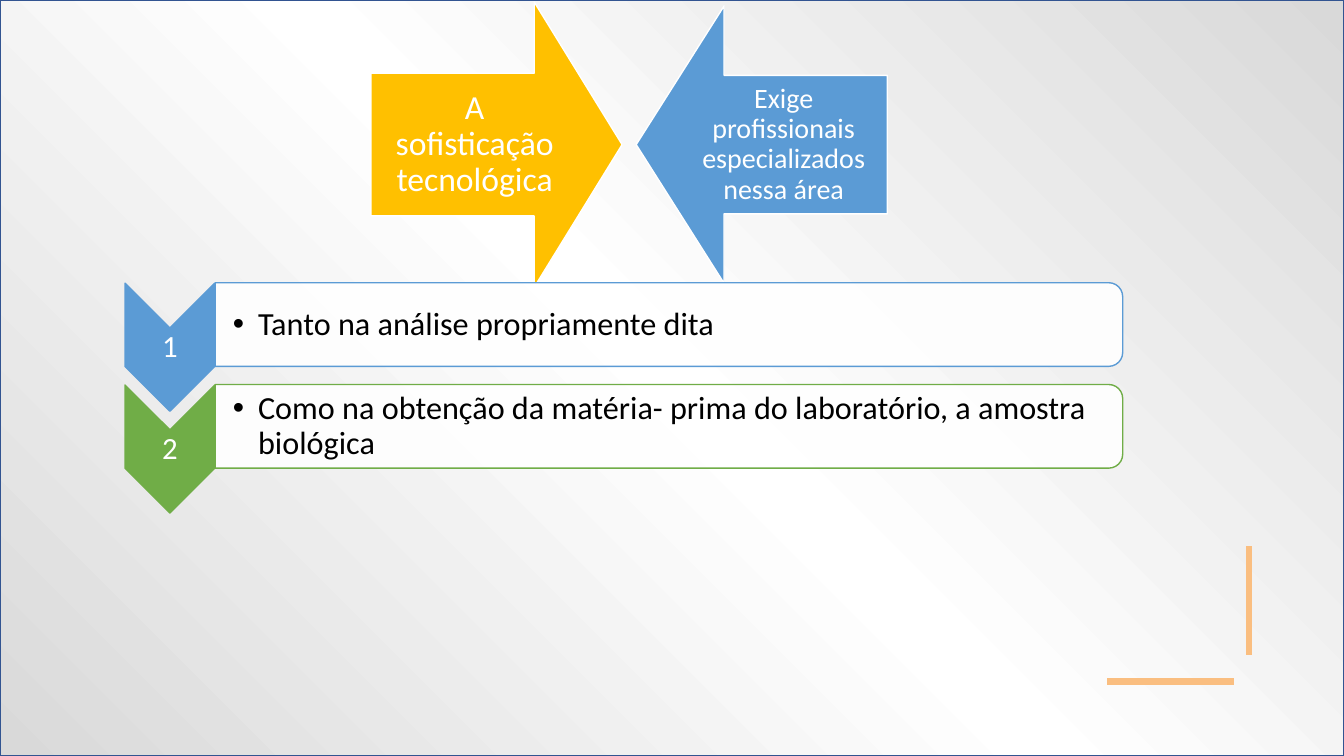
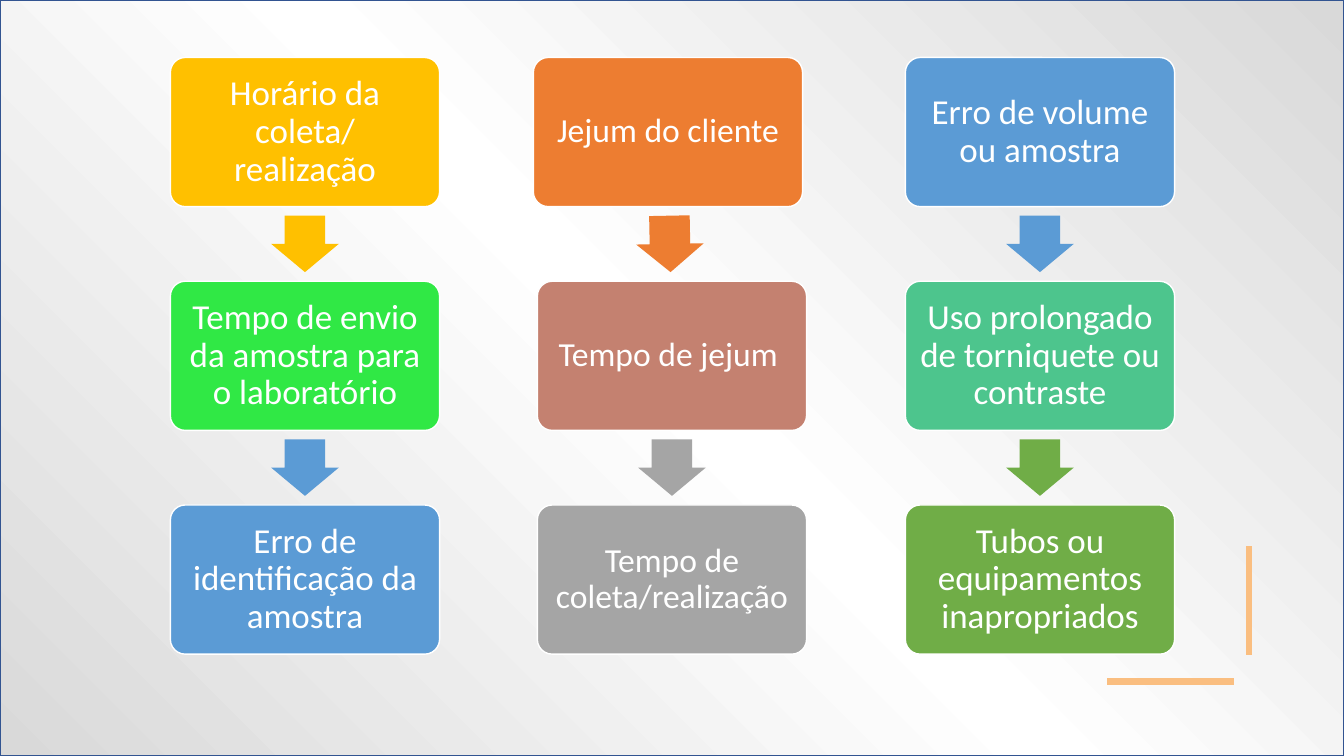
"""Build two slides on errors before laboratory analysis."""
from copy import deepcopy
from dataclasses import dataclass

from lxml import etree
from pptx import Presentation
from pptx.dml.color import RGBColor
from pptx.enum import shapes, text
from pptx.oxml.ns import qn
from pptx.util import Inches, Pt

KIND = shapes.MSO_SHAPE


@dataclass(frozen=True)
class Theme:
    """Colours, font and type sizes."""
    font: str = "Calibri"
    white: str = "FFFFFF"
    black: str = "000000"
    edge: str = "D9D9D9"
    frame: str = "325491"
    accent: str = "FABE80"
    gold: str = "FFC000"
    blue: str = "5B9BD5"
    green: str = "70AD47"
    orange: str = "ED7D31"
    lime: str = "30E845"
    rose: str = "C48170"
    gray: str = "A5A5A5"
    mint: str = "4DC58D"
    small: int = 20
    num: int = 22
    body: int = 23
    mid: int = 24
    large: int = 25


T = Theme()


def rgb(code):
    """Turn a hex code into a colour."""
    return RGBColor.from_string(code)


def write(shape, words, size=T.mid, color=T.white, pad=0.1, side=None,
          align=text.PP_ALIGN.CENTER, bullet=False):
    """Put formatted text into a shape."""
    frame = shape.text_frame
    frame.word_wrap = True
    frame.vertical_anchor = text.MSO_ANCHOR.MIDDLE
    frame.margin_left = Inches(pad if side is None else side)
    frame.margin_right = frame.margin_top = frame.margin_bottom = Inches(pad)
    para = frame.paragraphs[0]
    para.alignment = align
    para.line_spacing = 0.9
    if bullet:
        props = para._p.get_or_add_pPr()
        props.set("marL", str(Inches(0.25)))
        props.set("indent", str(-Inches(0.25)))
        etree.SubElement(props, qn("a:buFont")).set("typeface", "Arial")
        etree.SubElement(props, qn("a:buChar")).set("char", "•")
    run = para.add_run()
    run.text = words
    run.font.name = T.font
    run.font.size = Pt(size)
    run.font.color.rgb = rgb(color)


def draw(slide, kind, box, fill=None, line=None, adj=(), turn=0):
    """Add a preset shape with plain fill and line."""
    shape = slide.shapes.add_shape(kind, *map(Inches, box))
    shape.shadow.inherit = False
    shape.rotation = turn
    for i, value in enumerate(adj):
        shape.adjustments[i] = value
    if fill:
        shape.fill.solid()
        shape.fill.fore_color.rgb = rgb(fill)
    if line:
        shape.line.color.rgb = rgb(line)
        shape.line.width = Pt(1)
    else:
        shape.line.fill.background()
    return shape


def label(slide, box, words, **style):
    """Add a text box."""
    write(slide.shapes.add_textbox(*map(Inches, box)), words, **style)


def rule(slide, *ends):
    """Add a thick accent line."""
    line = slide.shapes.add_connector(
        shapes.MSO_CONNECTOR.STRAIGHT, *map(Inches, ends))
    line.line.color.rgb = rgb(T.accent)
    line.line.width = Pt(4.5)
    etree.SubElement(line._element.spPr, qn("a:effectLst"))


def base(deck):
    """Add a slide with the shared backdrop and corner lines."""
    slide = deck.slides.add_slide(deck.slide_layouts[6])
    back = draw(slide, KIND.RECTANGLE, (0, 0, 13.33, 7.5), line=T.frame)
    back.fill.gradient()
    back.fill.gradient_angle = 45
    for stop in back.fill.gradient_stops:
        stop.color.rgb = rgb(T.edge)
    stops = back._element.spPr.find(".//" + qn("a:gsLst"))
    mid = deepcopy(stops[0])
    mid.set("pos", "50000")
    mid[0].set("val", T.white)
    stops.insert(1, mid)
    rule(slide, 10.98, 6.76, 12.24, 6.76)
    rule(slide, 12.39, 5.42, 12.39, 6.5)
    return slide


def step(slide, num, top, color, words):
    """Add a numbered chevron with its bulleted panel."""
    draw(slide, KIND.CHEVRON, (1.05, top + 0.19, 1.27, 0.89), color, color,
         turn=90)
    label(slide, (1.24, top + 0.45, 0.89, 0.38), str(num), size=T.num,
          pad=0.02)
    panel = draw(slide, KIND.ROUND_2_SAME_RECTANGLE,
                 (6.22, top - 4.09, 0.83, 9), T.white, color, turn=90)
    tint = panel._element.spPr.find(qn("a:solidFill"))[0]
    etree.SubElement(tint, qn("a:alpha")).set("val", "90000")
    label(slide, (2.13, top + 0.04, 8.96, 0.75), words, size=T.body,
          color=T.black, pad=0.02, side=0.18, align=text.PP_ALIGN.LEFT,
          bullet=True)


def need(deck):
    """Build the slide on technology and specialists."""
    slide = base(deck)
    pair = (
        (KIND.RIGHT_ARROW, (3.68, 0.02, 2.49, 2.83), T.gold,
         "A sofisticação tecnológica", T.mid, 0.19),
        (KIND.LEFT_ARROW, (6.31, 0.06, 2.49, 2.75), T.blue,
         "Exige profissionais especializados nessa área", T.small, 0.16),
    )
    for kind, box, color, words, size, pad in pair:
        arrow = draw(slide, kind, box, color, T.white, (0.5, 0.35))
        write(arrow, words, size=size, pad=pad)
    steps = (
        (T.blue, "Tanto na análise propriamente dita"),
        (T.green, "Como na obtenção da matéria- prima do laboratório, "
                  "a amostra biológica"),
    )
    for i, (color, words) in enumerate(steps):
        step(slide, i + 1, 2.81 + 1.01 * i, color, words)


def chain(slide, left, size, items, shift=0, turn=0):
    """Add a column of boxes joined by arrows; the first may be shifted."""
    wide, high, pitch = 2.67, 1.48, 2.22
    for i, (color, words) in enumerate(items):
        top = 0.57 + pitch * i
        move = 0 if i else shift
        box = draw(slide, KIND.ROUNDED_RECTANGLE,
                   (left + move, top, wide, high), color, T.white, (0.1,))
        write(box, words, size=size)
        if i < len(items) - 1:
            tint = items[i + 1][0] if i else color
            spot = (left + move / 2 + (wide - 0.67) / 2,
                    top + (high + pitch - 0.56) / 2, 0.67, 0.56)
            draw(slide, KIND.DOWN_ARROW, spot, tint, adj=(0.6, 0.5),
                 turn=0 if i else turn)


def flaws(deck):
    """Build the slide with three chains of errors."""
    slide = base(deck)
    chain(slide, 1.69, T.large, (
        (T.gold, "Horário da coleta/ realização"),
        (T.lime, "Tempo de envio da amostra para o laboratório"),
        (T.blue, "Erro de identificação da amostra")))
    chain(slide, 5.33, T.mid, (
        (T.orange, "Jejum do cliente"),
        (T.rose, "Tempo de jejum "),
        (T.gray, "Tempo de coleta/realização")), shift=-0.04, turn=-1.1)
    chain(slide, 8.98, T.large, (
        (T.blue, "Erro de volume ou amostra"),
        (T.mint, "Uso prolongado de torniquete ou contraste"),
        (T.green, "Tubos ou equipamentos inapropriados")))


def main():
    """Build and save the deck."""
    deck = Presentation()
    deck.slide_width, deck.slide_height = Inches(13.33), Inches(7.5)
    need(deck)
    flaws(deck)
    deck.save("out.pptx")


if __name__ == "__main__":
    main()
